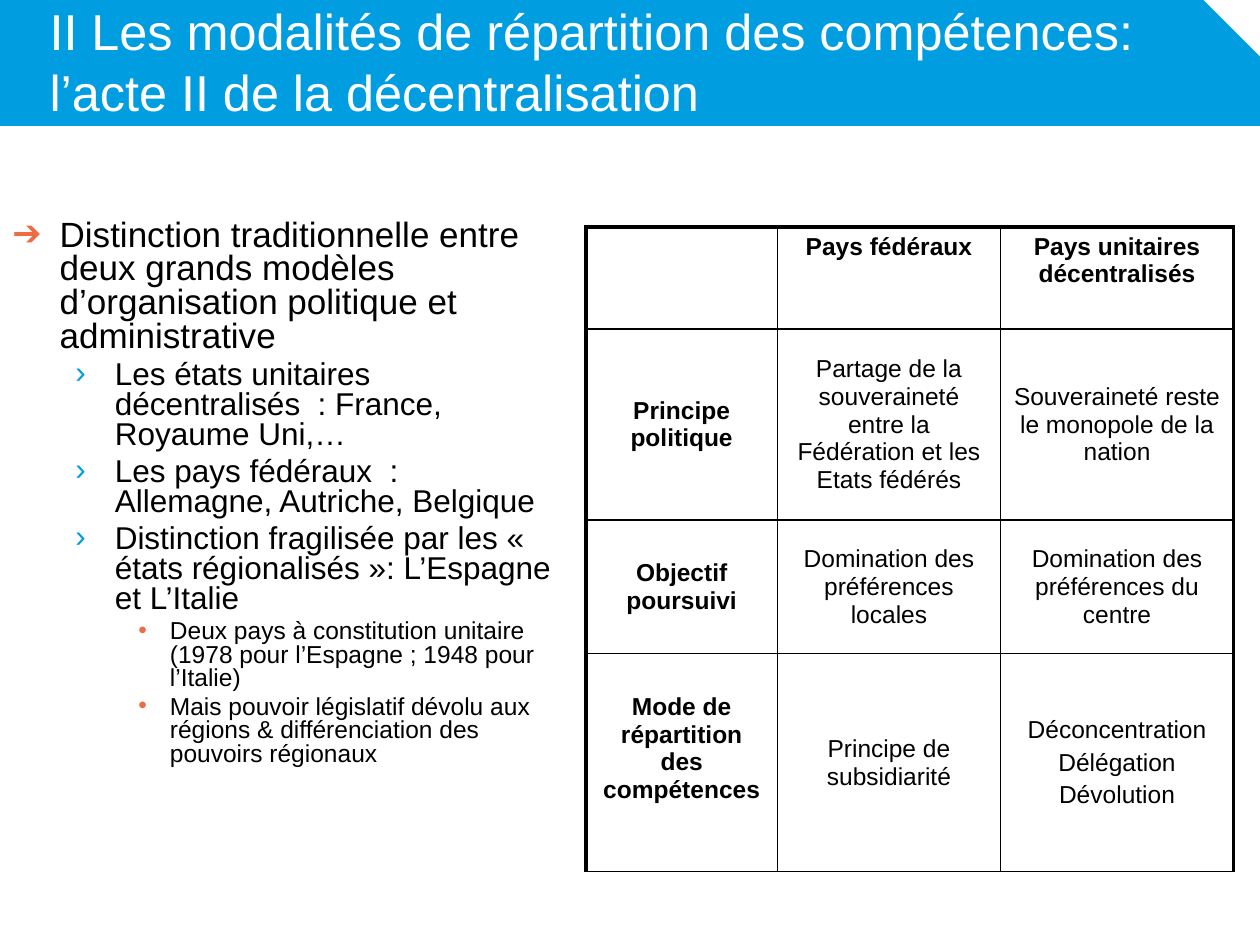
from lxml.etree import SubElement
from pptx import Presentation
from pptx.dml.color import RGBColor
from pptx.enum.shapes import MSO_SHAPE
from pptx.enum.text import MSO_ANCHOR, PP_ALIGN
from pptx.oxml.ns import qn
from pptx.util import Pt

BLUE = RGBColor(0x00, 0x9D, 0xE0)
ORANGE = RGBColor(0xEC, 0x6C, 0x43)
BLACK = RGBColor(0x00, 0x00, 0x00)
WHITE = RGBColor(0xFF, 0xFF, 0xFF)

TITLE = "II Les modalités de répartition des compétences: l’acte II de la décentralisation"
LEVELS = [
    dict(size=20, indent=27, left=27, bullet="➔", bullet_color=ORANGE),
    dict(size=18, indent=22.5, left=58.5, bullet="›", bullet_color=BLUE),
    dict(size=14, indent=18, left=90, bullet="•", bullet_color=ORANGE),
]
OUTLINE = [
    (0, "Distinction traditionnelle entre deux grands modèles d’organisation politique et administrative"),
    (1, "Les états unitaires décentralisés  : France, Royaume Uni,…"),
    (1, "Les pays fédéraux  : Allemagne, Autriche, Belgique"),
    (1, "Distinction fragilisée par les « états régionalisés »: L’Espagne et L’Italie"),
    (2, "Deux pays à constitution unitaire (1978 pour l’Espagne ; 1948 pour l’Italie)"),
    (2, "Mais pouvoir législatif dévolu aux régions & différenciation des pouvoirs régionaux"),
]
COLUMN_WIDTHS = [109.5, 127.5, 133.2]
ROW_HEIGHTS = [58.3, 109.4, 76.3, 124.6]
COMPARISON = [
    ["", "Pays fédéraux", "Pays unitaires décentralisés"],
    ["Principe politique",
     "Partage de la souveraineté entre la Fédération et les Etats fédérés",
     "Souveraineté reste le monopole de la nation"],
    ["Objectif poursuivi", "Domination des préférences locales",
     "Domination des préférences du centre"],
    ["Mode de répartition des compétences", "Principe de subsidiarité",
     "Déconcentration\nDélégation\nDévolution"],
]


def write_text(para, text, size=14, color=BLACK, bold=False, align=PP_ALIGN.LEFT,
               before=0, line_spacing=None):
    """Write one formatted span into a paragraph."""
    para.alignment = align
    para.space_before = Pt(before)
    if line_spacing:
        para.line_spacing = line_spacing
    span = para.add_run()
    span.text = text
    span.font.name = "Arial"
    span.font.size = Pt(size)
    span.font.bold = bold
    span.font.color.rgb = color


def next_paragraph(frame, index):
    """Return the first paragraph of a frame, or a new one after it."""
    return frame.add_paragraph() if index else frame.paragraphs[0]


def add_bullet(para, character, color, left, indent):
    """Give a paragraph a hanging coloured bullet."""
    properties = para._p.get_or_add_pPr()
    properties.set("marL", str(Pt(left)))
    properties.set("indent", str(-Pt(indent)))
    bullet_color = SubElement(properties, qn("a:buClr"))
    SubElement(bullet_color, qn("a:srgbClr"), val=str(color))
    SubElement(properties, qn("a:buFont"), typeface="Arial")
    SubElement(properties, qn("a:buChar"), char=character)


def set_borders(cell, **widths):
    """Draw black cell borders with widths given by side."""
    properties = cell._tc.get_or_add_tcPr()
    for side in "LRTB":
        border = SubElement(properties, qn(f"a:ln{side}"), w=str(Pt(widths.get(side, 1))))
        fill = SubElement(border, qn("a:solidFill"))
        SubElement(fill, qn("a:srgbClr"), val=str(BLACK))


class SlideBuilder:
    """Hold the style and the current page."""

    thick = 2.25
    spacing = 0.2
    tight = 0.8

    def __init__(self, deck):
        """Start a blank page."""
        self.page = deck.slides.add_slide(deck.slide_layouts[6])

    def banner(self, left, top, width, height):
        """Draw the blue band with its cut corner."""
        band = self.page.shapes.add_shape(
            MSO_SHAPE.SNIP_1_RECTANGLE, Pt(left), Pt(top), Pt(width), Pt(height))
        band.adjustments[0] = 0.46
        band.shadow.inherit = False
        band.fill.solid()
        band.fill.fore_color.rgb = BLUE
        band.line.fill.background()

    def text_frame(self, left, top, width, height):
        """Add a wrapping text box and return its frame."""
        box = self.page.shapes.add_textbox(Pt(left), Pt(top), Pt(width), Pt(height))
        box.text_frame.word_wrap = True
        return box.text_frame

    def title(self, text, left, top, width, height):
        """Write the white title."""
        frame = self.text_frame(left, top, width, height)
        frame.margin_left = Pt(28.35)
        frame.vertical_anchor = MSO_ANCHOR.MIDDLE
        write_text(frame.paragraphs[0], text, size=28.8, color=WHITE)

    def outline(self, items, left, top, width, height):
        """Write the bulleted outline."""
        frame = self.text_frame(left, top, width, height)
        for index, (level, text) in enumerate(items):
            style = LEVELS[level]
            para = next_paragraph(frame, index)
            para.level = level
            add_bullet(para, style["bullet"], style["bullet_color"],
                       style["left"], style["indent"])
            write_text(para, text, size=style["size"], line_spacing=self.tight,
                       before=style["size"] * self.spacing if index else 0)

    def table(self, rows, left, top):
        """Build the comparison table with a heavy outer frame."""
        table = self.page.shapes.add_table(
            len(rows), len(COLUMN_WIDTHS), Pt(left), Pt(top),
            Pt(sum(COLUMN_WIDTHS)), Pt(sum(ROW_HEIGHTS))).table
        table.first_row = table.horz_banding = False
        for column, width in zip(table.columns, COLUMN_WIDTHS):
            column.width = Pt(width)
        for row_index, (texts, height) in enumerate(zip(rows, ROW_HEIGHTS)):
            table.rows[row_index].height = Pt(height)
            for column_index, text in enumerate(texts):
                self.cell(table.cell(row_index, column_index), text,
                          row_index, column_index)
        table.cell(len(rows) - 1, 0).margin_bottom = Pt(20)

    def cell(self, cell, text, row, column):
        """Fill, frame and write one table cell."""
        set_borders(cell, L=1 if column else self.thick, T=1 if row else self.thick,
                    R=self.thick if column == len(COLUMN_WIDTHS) - 1 else 1)
        cell.fill.background()
        cell.vertical_anchor = MSO_ANCHOR.MIDDLE if row else MSO_ANCHOR.TOP
        if not text:
            return
        for index, line in enumerate(text.split("\n")):
            write_text(next_paragraph(cell.text_frame, index), line,
                       bold=row == 0 or column == 0, align=PP_ALIGN.CENTER,
                       before=14 * self.spacing if index else 0)


def main():
    """Build and save the deck."""
    deck = Presentation()
    deck.slide_width, deck.slide_height = Pt(720), Pt(540)
    builder = SlideBuilder(deck)
    builder.banner(0, 0, 720.7, 72)
    builder.title(TITLE, 0, 0, 674.6, 69.8)
    builder.outline(OUTLINE, 0, 122.4, 325.4, 417.6)
    builder.table(COMPARISON, 334.8, 129.6)
    deck.save("out.pptx")


if __name__ == "__main__":
    main()
